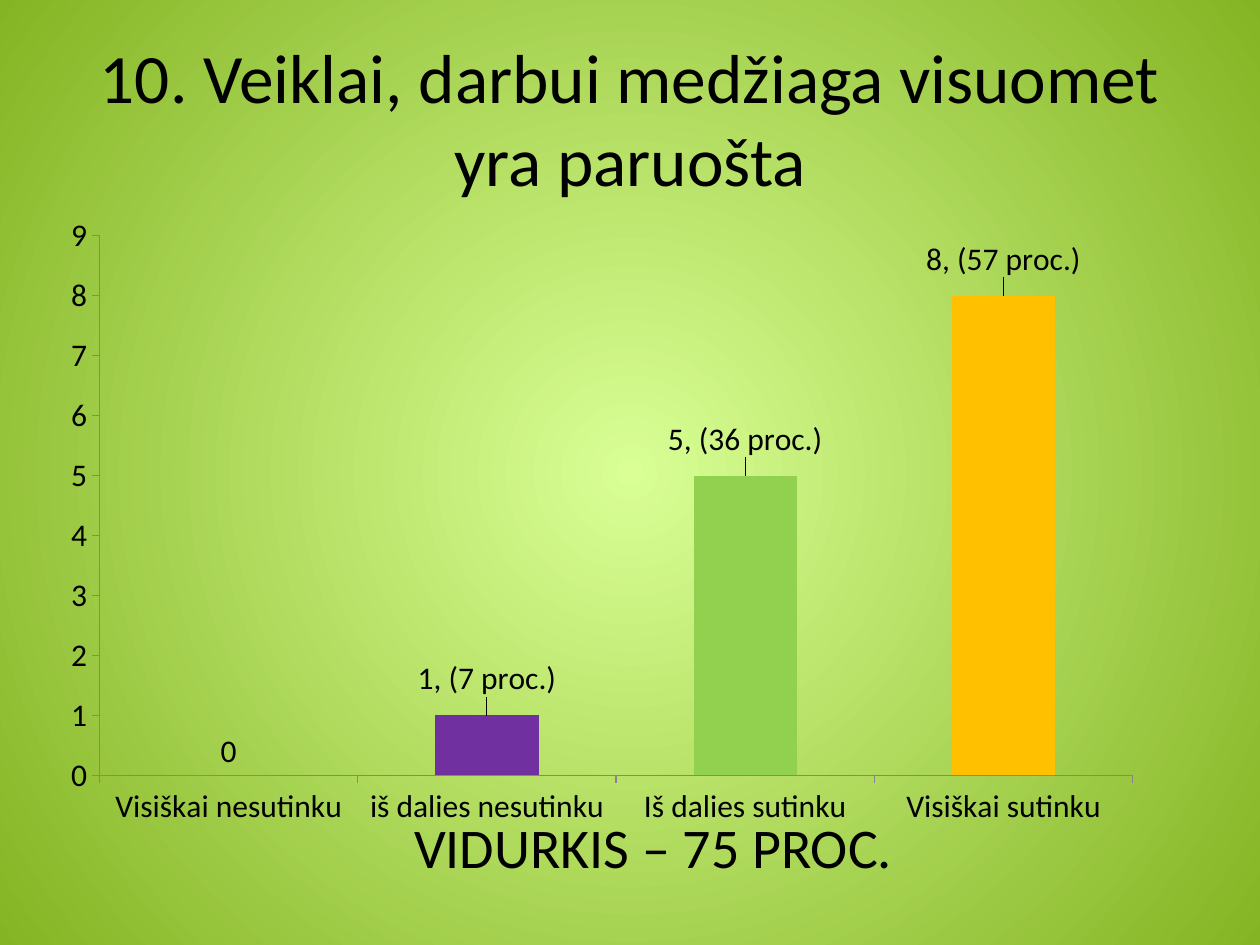
from dataclasses import dataclass
from lxml.etree import SubElement
from pptx import Presentation
from pptx.chart.data import CategoryChartData as Data
from pptx.dml.color import RGBColor as RGB
from pptx.enum.chart import XL_CHART_TYPE as Kind, XL_LABEL_POSITION as Spot, XL_TICK_MARK as Tick
from pptx.enum.text import MSO_ANCHOR as Anchor, MSO_AUTO_SIZE as Fit, PP_ALIGN as Align
from pptx.oxml.ns import qn
from pptx.util import Emu, Inches, Pt


@dataclass(frozen=True)
class Theme:
    font: str = "Calibri"
    ink: str = "000000"
    axis: str = "868686"
    glow: str = "D9FF95"
    edge: str = "84B423"
    base: str = "94C600"
    title: float = 39.6
    mean: float = 32
    chart: float = 18


THEME = Theme()
BARS = [
    ("Visiškai nesutinku", 0, None, None),
    ("iš dalies nesutinku", 1, "7030A0", "1, (7 proc.)"),
    ("Iš dalies sutinku", 5, "92D050", "5, (36 proc.)"),
    ("Visiškai sutinku", 8, "FFC000", "8, (57 proc.)"),
]


def px(num):
    return Emu(round(num * Inches(1) / 126))


def style(font, size):
    font.name = THEME.font
    font.size = Pt(size)
    font.color.rgb = RGB.from_string(THEME.ink)


def paint(fill, tone):
    fill.solid()
    fill.fore_color.rgb = RGB.from_string(tone)


def layout(host, spot, **parts):
    for old in host.findall(qn("c:layout")):
        host.remove(old)
    node = host.makeelement(qn("c:layout"))
    host.insert(spot, node)
    manual = SubElement(node, qn("c:manualLayout"))
    for tag, val in parts.items():
        SubElement(manual, qn(f"c:{tag}")).set("val", str(val))


def backdrop(slide):
    fill = slide.background.fill
    fill.gradient()
    for stop, tone, place in zip(fill.gradient_stops, (THEME.glow, THEME.edge), (0, 1)):
        stop.color.rgb = RGB.from_string(tone)
        stop.position = place
    grad = slide.element.find(".//" + qn("a:gradFill"))
    grad.remove(grad.find(qn("a:lin")))
    ring = SubElement(grad, qn("a:path"), path="circle")
    SubElement(ring, qn("a:fillToRect"), l="50000", t="50000", r="50000", b="50000")


def write(shape, box, text, size, anchor):
    shape.left, shape.top, shape.width, shape.height = map(px, box)
    frame = shape.text_frame
    frame.word_wrap = True
    frame.vertical_anchor = anchor
    frame.text = text
    para = frame.paragraphs[0]
    para.alignment = Align.CENTER
    style(para.font, size)
    return frame


def heading(slide, box):
    write(slide.shapes.title, box, "10. Veiklai, darbui medžiaga visuomet yra paruošta",
          THEME.title, Anchor.MIDDLE)


def average(slide, box):
    shape = slide.shapes.add_textbox(*map(px, box))
    frame = write(shape, box, "VIDURKIS – 75 PROC.", THEME.mean, Anchor.TOP)
    frame.auto_size = Fit.SHAPE_TO_FIT_TEXT


def answers(slide, box):
    data = Data(number_format="General")
    data.categories = [bar[0] for bar in BARS]
    data.add_series("Series 1", [bar[1] for bar in BARS])
    chart = slide.shapes.add_chart(Kind.COLUMN_CLUSTERED, *map(px, box), data).chart
    chart.has_legend = chart.has_title = False
    style(chart.font, THEME.chart)
    for axis in (chart.category_axis, chart.value_axis):
        axis.has_major_gridlines = False
        axis.major_tick_mark = Tick.OUTSIDE
        axis.format.line.color.rgb = RGB.from_string(THEME.axis)
        axis.format.line.width = Pt(0.75)
    scale = chart.value_axis
    scale.minimum_scale, scale.maximum_scale, scale.major_unit = 0, 9, 1
    plot = chart.plots[0]
    plot.gap_width = 150
    plot.vary_by_categories = False
    series = plot.series[0]
    series.invert_if_negative = False
    paint(series.format.fill, THEME.base)
    marks = series.data_labels
    marks.show_value = True
    marks.position = Spot.OUTSIDE_END
    style(marks.font, THEME.chart)
    for spot, (_, _, tone, text) in enumerate(BARS):
        if text:
            point = series.points[spot]
            paint(point.format.fill, tone)
            label = point.data_label
            label.text_frame.text = text
            style(label.text_frame.paragraphs[0].font, THEME.chart)
            label.position = Spot.OUTSIDE_END
    area = chart.element.find(".//" + qn("c:plotArea"))
    layout(area, 0, layoutTarget="inner", xMode="edge", yMode="edge",
           x=0.05, y=0.05, w=0.93, h=0.85)
    for label in area.iter(qn("c:dLbl")):
        layout(label, 1, x=0, y=-0.02)


def main():
    deck = Presentation()
    deck.slide_width, deck.slide_height = px(1260), px(945)
    slide = deck.slides.add_slide(deck.slide_layouts[5])
    backdrop(slide)
    heading(slide, (63, 38, 1134, 158))
    answers(slide, (44, 204, 1111, 635))
    average(slide, (113, 806, 1081, 81))
    deck.save("out.pptx")


if __name__ == "__main__":
    main()
